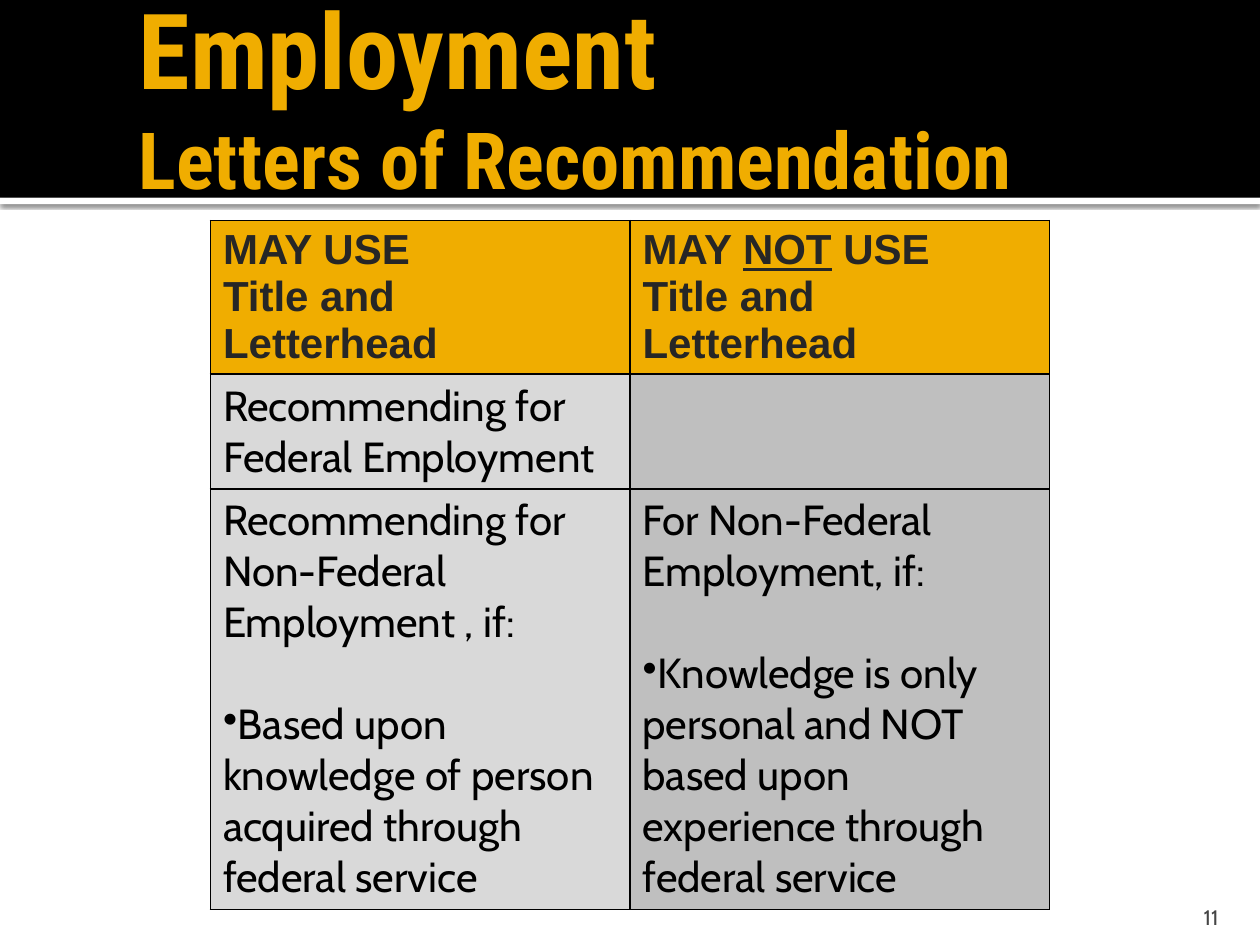
from lxml.etree import SubElement
from pptx import Presentation
from pptx.dml.color import RGBColor
from pptx.enum.shapes import MSO_SHAPE
from pptx.enum.text import MSO_ANCHOR, MSO_AUTO_SIZE, PP_ALIGN
from pptx.oxml import parse_xml
from pptx.oxml.ns import nsdecls, qn
from pptx.util import Inches, Pt

BLACK = RGBColor(0x00, 0x00, 0x00)
WHITE = RGBColor(0xFF, 0xFF, 0xFF)
GOLD = RGBColor(0xF0, 0xAD, 0x00)
CHARCOAL = RGBColor(0x26, 0x26, 0x26)
SLATE = RGBColor(0x45, 0x45, 0x45)
LIGHT_GREY = RGBColor(0xD9, 0xD9, 0xD9)
MID_GREY = RGBColor(0xBF, 0xBF, 0xBF)

TITLE = {"name": "Roboto Condensed", "size": Pt(60), "bold": True, "color": GOLD}
SUBTITLE = TITLE | {"size": Pt(45)}
HEADING = {"name": "Arial", "size": Pt(24), "bold": True, "color": CHARCOAL}
BODY = {"name": "Cabin", "size": Pt(24), "bold": False, "color": BLACK}
PAGE_NUMBER = BODY | {"size": Pt(12), "color": SLATE}

HEADINGS = [
    [[("MAY USE", {})], [("Title and Letterhead", {})]],
    [[("MAY ", {}), ("NOT", {"underline": True}), (" USE", {})],
     [("Title and Letterhead", {})]],
]
RULES = [
    [["Recommending for Federal Employment"], []],
    [["Recommending for Non-Federal Employment , if:",
      "Based upon knowledge of person acquired through federal service"],
     ["For Non-Federal Employment, if:",
      "Knowledge is only personal and NOT based upon experience through federal service"]],
]


class SlideBuilder:
    """Hold the current slide and add its styled elements."""

    def __init__(self, slide):
        self.slide = slide
        self.shapes = slide.shapes

    def run(self, paragraph, text, style):
        run = paragraph.add_run()
        run.text = text
        for key, value in style.items():
            if key == "color":
                run.font.color.rgb = value
            else:
                setattr(run.font, key, value)

    def frame(self, text_frame, settings):
        for key, value in settings.items():
            setattr(text_frame, key, value)

    def band(self, top, height, color, shadowed=False):
        band = self.shapes.add_shape(
            MSO_SHAPE.RECTANGLE, 0, Inches(top), Inches(10), Inches(height))
        band.fill.solid()
        band.fill.fore_color.rgb = color
        band.line.fill.background()
        band.shadow.inherit = False
        if shadowed:
            effects = band._element.spPr.find(qn("a:effectLst"))
            effects.append(parse_xml(
                f'<a:outerShdw {nsdecls("a")} blurRad="{Pt(2.5)}" dist="{Pt(0.8)}" '
                'dir="5400000" rotWithShape="0"><a:srgbClr val="000000">'
                '<a:alpha val="60000"/></a:srgbClr></a:outerShdw>'))

    def title(self, heading, subheading):
        title = self.shapes.title
        self.frame(title, {"left": Inches(1), "top": Inches(0.48),
                           "width": Inches(9), "height": Inches(1.27)})
        self.frame(title.text_frame, {
            "auto_size": MSO_AUTO_SIZE.NONE, "word_wrap": True,
            "vertical_anchor": MSO_ANCHOR.MIDDLE,
            "margin_left": Inches(0.1), "margin_right": Inches(0.05),
            "margin_top": Inches(0.05), "margin_bottom": Inches(0.78)})
        paragraph = title.text_frame.paragraphs[0]
        paragraph.alignment = PP_ALIGN.LEFT
        self.run(paragraph, heading, TITLE)
        paragraph.add_line_break()
        self.run(paragraph, subheading, SUBTITLE)
        self.shapes._spTree.append(title._element)

    def table(self, row_heights, column_width):
        table = self.shapes.add_table(
            len(row_heights), 2, Inches(1.67), Inches(1.75),
            Inches(2 * column_width), Inches(sum(row_heights))).table
        table.first_row = table.horz_banding = False
        for column in table.columns:
            column.width = Inches(column_width)
        for row, height in zip(table.rows, row_heights):
            row.height = Inches(height)
        return table

    def cell(self, cell, fill):
        properties = cell._tc.get_or_add_tcPr()
        for side in ("lnL", "lnR", "lnT", "lnB"):
            border = SubElement(properties, qn(f"a:{side}"), w=str(Pt(1)))
            solid = SubElement(border, qn("a:solidFill"))
            SubElement(solid, qn("a:srgbClr"), val=str(BLACK))
        cell.fill.solid()
        cell.fill.fore_color.rgb = fill

    def heading_cell(self, cell, lines):
        self.cell(cell, GOLD)
        for index, line in enumerate(lines):
            frame = cell.text_frame
            paragraph = frame.add_paragraph() if index else frame.paragraphs[0]
            for text, emphasis in line:
                self.run(paragraph, text, HEADING | emphasis)

    def rule_cell(self, cell, lines, fill):
        self.cell(cell, fill)
        for index, text in enumerate(lines):
            frame = cell.text_frame
            paragraph = frame.add_paragraph() if index else frame.paragraphs[0]
            self.run(paragraph, text, BODY)
            if index:
                paragraph.space_before = Pt(29)
                SubElement(paragraph._p.get_or_add_pPr(), qn("a:buChar"), char="•")

    def page_number(self, number):
        box = self.shapes.add_textbox(
            Inches(8.97), Inches(7.08), Inches(0.8), Inches(0.3))
        self.frame(box.text_frame, {
            "word_wrap": True, "vertical_anchor": MSO_ANCHOR.BOTTOM,
            "margin_bottom": 0})
        paragraph = box.text_frame.paragraphs[0]
        paragraph.alignment = PP_ALIGN.RIGHT
        self.run(paragraph, number, PAGE_NUMBER)


def main():
    presentation = Presentation()
    presentation.slide_width = Inches(10)
    presentation.slide_height = Inches(7.5)
    builder = SlideBuilder(
        presentation.slides.add_slide(presentation.slide_layouts[5]))

    builder.band(1.57, 0.05, WHITE, shadowed=True)
    builder.band(0, 1.57, BLACK)
    builder.title("Employment", "Letters of Recommendation")

    letterhead = builder.table([1.22, 0.91, 3.34], 3.33)
    for column, lines in enumerate(HEADINGS):
        builder.heading_cell(letterhead.cell(0, column), lines)
    for row, rules in enumerate(RULES, start=1):
        for column, fill in enumerate((LIGHT_GREY, MID_GREY)):
            builder.rule_cell(letterhead.cell(row, column), rules[column], fill)

    builder.page_number("11")
    presentation.save("out.pptx")


if __name__ == "__main__":
    main()
